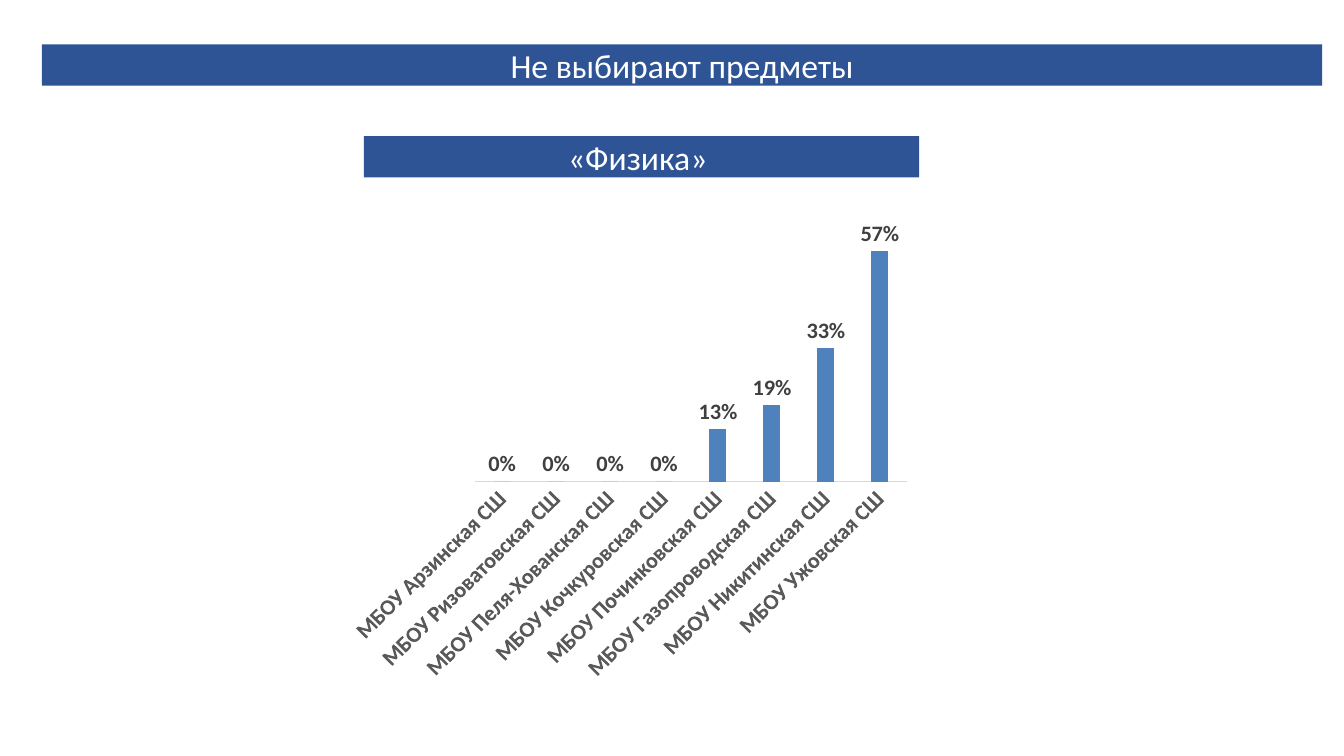
from pptx import Presentation
from pptx.chart.data import CategoryChartData
from pptx.dml.color import RGBColor
from pptx.enum.chart import XL_CHART_TYPE, XL_LABEL_POSITION, XL_TICK_MARK
from pptx.enum.shapes import MSO_SHAPE
from pptx.enum.text import MSO_ANCHOR, MSO_AUTO_SIZE, PP_ALIGN
from pptx.util import Pt

HEADING = "Не выбирают предметы"
SUBJECT = "«Физика» "
SHARE_BY_SCHOOL = {
    "МБОУ Арзинская СШ": 0,
    "МБОУ Ризоватовская СШ": 0,
    "МБОУ Пеля-Хованская СШ": 0,
    "МБОУ Кочкуровская СШ": 0,
    "МБОУ Починковская СШ": 0.13,
    "МБОУ Газопроводская СШ": 0.19,
    "МБОУ Никитинская СШ": 0.33,
    "МБОУ Ужовская СШ": 0.57,
}

FONT = "Calibri"
BANNER_BLUE = RGBColor(0x2E, 0x54, 0x96)
BAR_BLUE = RGBColor(0x4F, 0x81, 0xBD)
WHITE = RGBColor(0xFF, 0xFF, 0xFF)
AXIS_TEXT = RGBColor(0x59, 0x59, 0x59)
AXIS_LINE = RGBColor(0xD9, 0xD9, 0xD9)
LABEL_TEXT = RGBColor(0x40, 0x40, 0x40)

BANNER_HEIGHT = 29.5


def set_font(font, size, color, bold=False):
    font.name = FONT
    font.size = Pt(size)
    font.bold = bold
    font.color.rgb = color


def format_banner(banner, text, left, top, width):
    banner.left, banner.top = Pt(left), Pt(top)
    banner.width, banner.height = Pt(width), Pt(BANNER_HEIGHT)
    banner.fill.solid()
    banner.fill.fore_color.rgb = BANNER_BLUE
    banner.line.fill.background()
    frame = banner.text_frame
    frame.auto_size = MSO_AUTO_SIZE.NONE
    frame.word_wrap = True
    frame.vertical_anchor = MSO_ANCHOR.MIDDLE
    frame.margin_left = frame.margin_right = frame.margin_bottom = 0
    frame.margin_top = Pt(3)
    frame.text = text
    paragraph = frame.paragraphs[0]
    paragraph.alignment = PP_ALIGN.CENTER
    paragraph.line_spacing = Pt(25.9)
    paragraph.space_before = Pt(3.2)
    set_font(paragraph.font, 24, WHITE)


def add_share_chart(slide, left, top, width, height):
    chart_data = CategoryChartData(number_format="0%")
    chart_data.categories = list(SHARE_BY_SCHOOL)
    chart_data.add_series("Не выбирают", list(SHARE_BY_SCHOOL.values()))
    chart = slide.shapes.add_chart(
        XL_CHART_TYPE.COLUMN_CLUSTERED,
        Pt(left), Pt(top), Pt(width), Pt(height), chart_data).chart
    chart.has_title = False
    chart.has_legend = False
    chart.font.name = FONT
    chart.font.size = Pt(10)

    schools = chart.category_axis
    schools.major_tick_mark = schools.minor_tick_mark = XL_TICK_MARK.NONE
    schools.format.line.color.rgb = AXIS_LINE
    schools.format.line.width = Pt(0.75)
    set_font(schools.tick_labels.font, 16, AXIS_TEXT, bold=True)
    schools._element.txPr.bodyPr.set("rot", "-2700000")

    shares = chart.value_axis
    shares.has_major_gridlines = False
    shares.minimum_scale, shares.maximum_scale = 0, 0.6
    shares.visible = False

    plot = chart.plots[0]
    plot.gap_width, plot.overlap = 219, -27
    plot.vary_by_categories = False
    bars = plot.series[0]
    bars.format.fill.solid()
    bars.format.fill.fore_color.rgb = BAR_BLUE
    labels = bars.data_labels
    labels.show_value = True
    labels.position = XL_LABEL_POSITION.OUTSIDE_END
    labels.number_format = "0%"
    labels.number_format_is_linked = False
    set_font(labels.font, 16, LABEL_TEXT, bold=True)


def main():
    presentation = Presentation()
    presentation.slide_width, presentation.slide_height = Pt(960), Pt(540)
    slide = presentation.slides.add_slide(presentation.slide_layouts[5])

    format_banner(slide.shapes.title, HEADING, 30, 31.7, 914.4)
    add_share_chart(slide, 242, 157.7, 414, 335.5)
    subject_banner = slide.shapes.add_shape(MSO_SHAPE.RECTANGLE, 0, 0, 0, 0)
    subject_banner.shadow.inherit = False
    format_banner(subject_banner, SUBJECT, 259.9, 97.2, 396.7)

    presentation.save("out.pptx")


if __name__ == "__main__":
    main()
